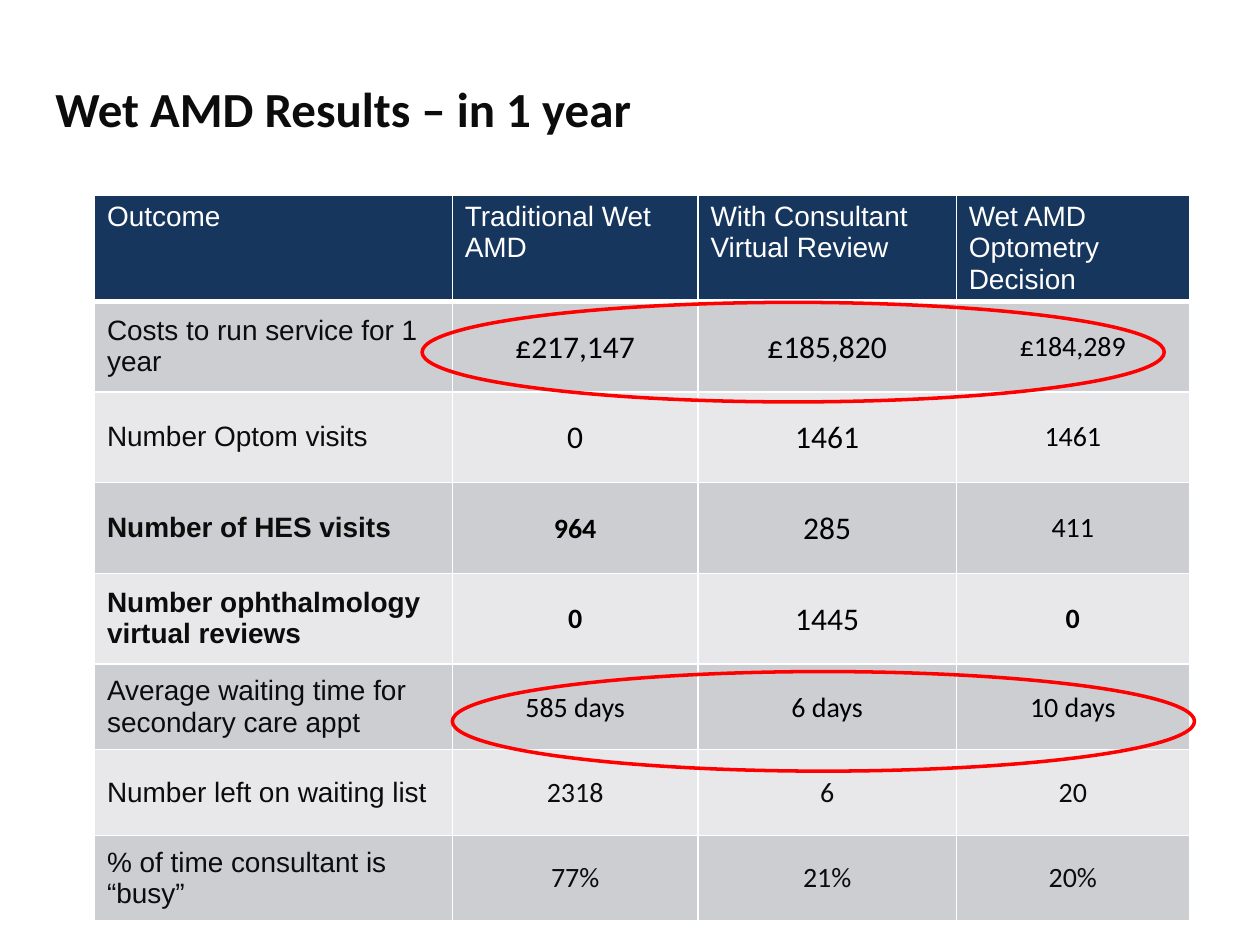
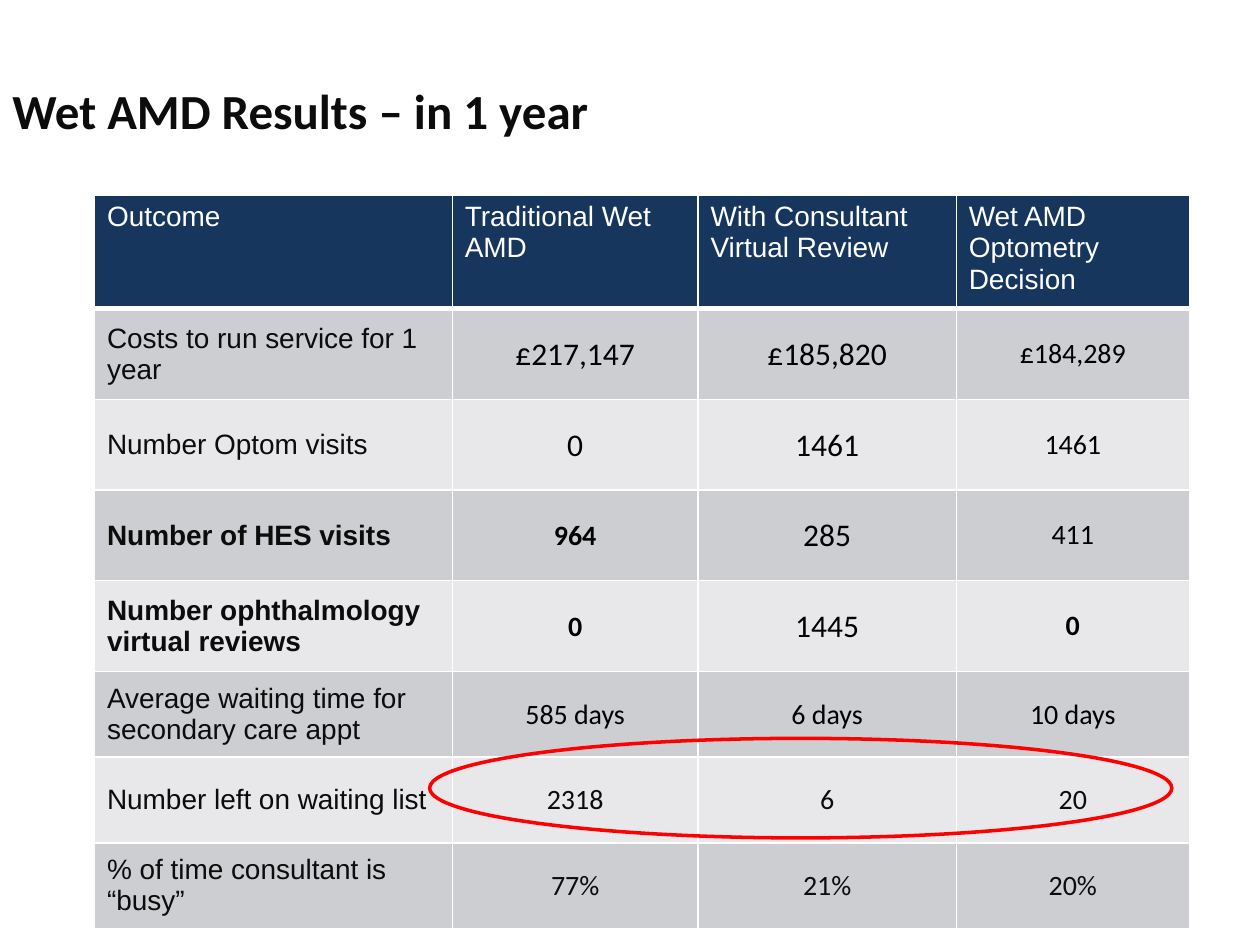
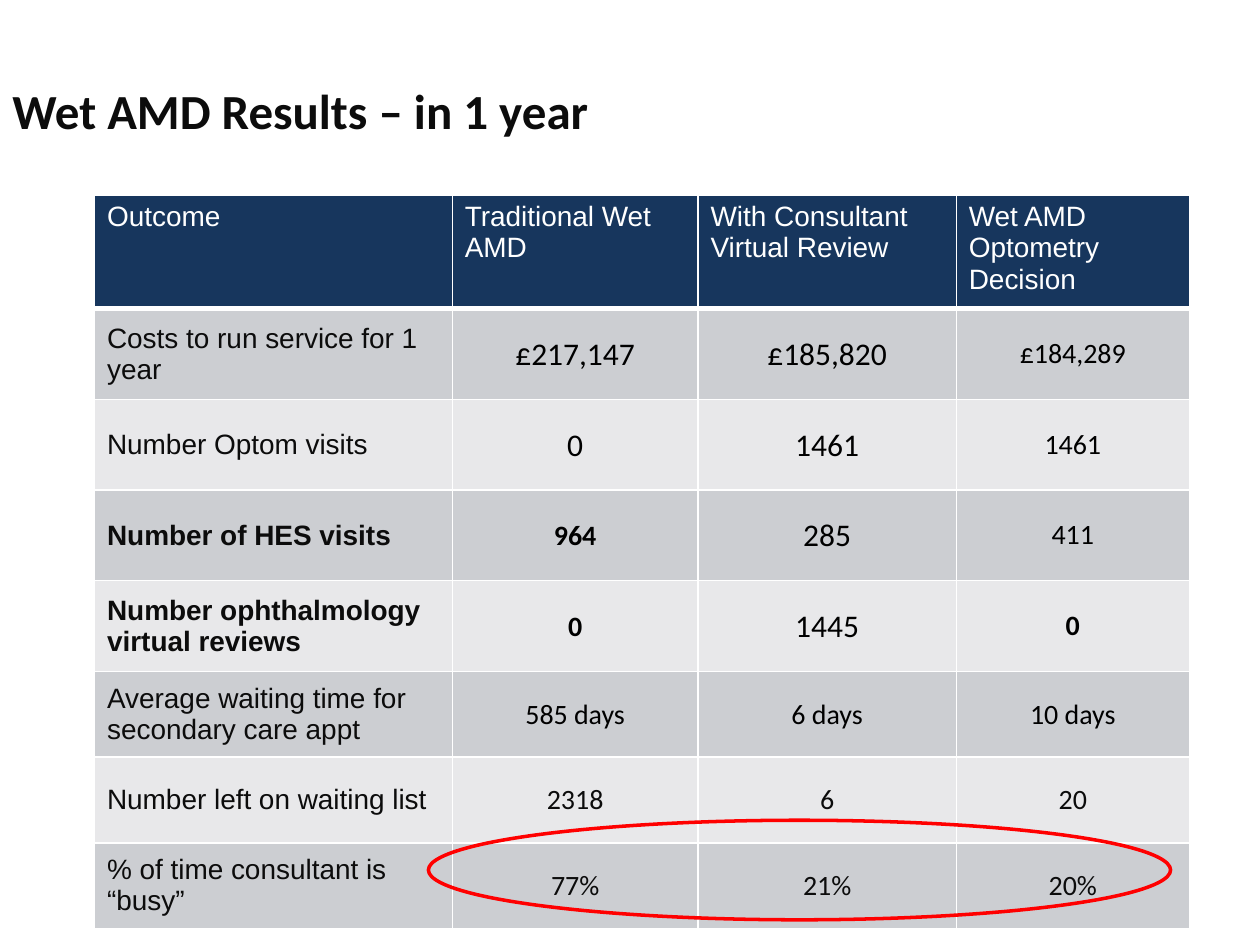
from lxml import etree
from pptx import Presentation
from pptx.dml.color import RGBColor
from pptx.enum import shapes, text
from pptx.oxml import ns
from pptx.util import Inches, Pt

NAVY = RGBColor(0x17, 0x36, 0x5D)
DARK_BAND = RGBColor(0xCC, 0xCE, 0xD2)
LIGHT_BAND = RGBColor(0xE8, 0xE8, 0xEA)
INK = RGBColor(0x0C, 0x0C, 0x0C)
BLACK = RGBColor(0, 0, 0)
WHITE = RGBColor(0xFF, 0xFF, 0xFF)
RED = RGBColor(0xFF, 0, 0)

TITLE = "Wet AMD Results – in 1 year"
RESULTS = [
    ["Outcome", "Traditional Wet AMD", "With Consultant Virtual Review", "Wet AMD Optometry Decision"],
    ["Costs to run service for 1 year", "£217,147", "£185,820", "£184,289"],
    ["Number Optom visits", "0", "1461", "1461"],
    ["Number of HES visits", "964", "285", "411"],
    ["Number ophthalmology virtual reviews", "0", "1445", "0"],
    ["Average waiting time for secondary care appt", "585 days", "6 days", "10 days"],
    ["Number left on waiting list", "2318", "6", "20"],
    ["% of time consultant is “busy”", "77%", "21%", "20%"],
]
COLUMN_WIDTHS = [2.84, 1.95, 2.05, 1.85]
ROW_HEIGHTS = [0.72] * 5 + [0.68] * 3
BOLD_CELLS = {(3, 0), (3, 1), (4, 0), (4, 1), (4, 3)}
LARGE_CELLS = {(1, 1), (1, 2), (2, 1), (2, 2), (3, 2), (4, 2)}
TIGHT_CELLS = {(row, column) for row in range(1, 6) for column in (1, 2)} | {(5, 3)}

TABLE_BOX = (0.75, 1.55, 8.7, 5.84)
RING_SIZE = (5.89, 0.79)
TITLE_SIZE = (9.31, 1.45)
PAGES = [
    ((0.34, 0.13), [(3.35, 2.4), (3.59, 5.33)]),
    ((0, 0.15), [(3.41, 5.86)]),
    ((0, 0.15), [(3.4, 6.51)]),
]


def inches(values):
    return [Inches(value) for value in values]


def style_paragraph(para, size, font_name, color, bold):
    para.font.size = Pt(size)
    para.font.name = font_name
    para.font.color.rgb = color
    para.font.bold = bold


def add_borders(cell, bottom_width):
    properties = cell._tc.get_or_add_tcPr()
    for side, width in (("L", 1), ("R", 1), ("T", 1), ("B", bottom_width)):
        line = etree.SubElement(properties, ns.qn(f"a:ln{side}"), w=str(Pt(width)))
        fill = etree.SubElement(line, ns.qn("a:solidFill"))
        etree.SubElement(fill, ns.qn("a:srgbClr"), val=str(WHITE))


def fill_cell(cell, row, column):
    header = row == 0
    add_borders(cell, 3 if header else 1)
    cell.fill.solid()
    cell.fill.fore_color.rgb = NAVY if header else DARK_BAND if row % 2 else LIGHT_BAND
    cell.text = RESULTS[row][column]
    para = cell.text_frame.paragraphs[0]
    is_value = not header and column > 0
    color = WHITE if header else BLACK if is_value and row < 6 else INK
    style_paragraph(para, 18 if (row, column) in LARGE_CELLS else 16,
                    "Calibri" if is_value else "Arial", color, (row, column) in BOLD_CELLS)
    if is_value:
        para.alignment = text.PP_ALIGN.CENTER
    if not header:
        cell.vertical_anchor = text.MSO_ANCHOR.MIDDLE
    if (row, column) in TIGHT_CELLS:
        cell.margin_left = cell.margin_right = cell.margin_top = Inches(0.01)
        cell.margin_bottom = 0


def add_results_table(page, box):
    table = page.shapes.add_table(len(ROW_HEIGHTS), len(COLUMN_WIDTHS), *inches(box)).table
    for column, width in zip(table.columns, COLUMN_WIDTHS):
        column.width = Inches(width)
    for row, height in zip(table.rows, ROW_HEIGHTS):
        row.height = Inches(height)
    for row in range(len(ROW_HEIGHTS)):
        for column in range(len(COLUMN_WIDTHS)):
            fill_cell(table.cell(row, column), row, column)


def add_ring(page, box):
    ring = page.shapes.add_shape(shapes.MSO_SHAPE.OVAL, *inches(box))
    ring.shadow.inherit = False
    ring.fill.background()
    ring.line.color.rgb = RED
    ring.line.width = Pt(2)


def add_title(page, box):
    frame = page.shapes.add_textbox(*inches(box)).text_frame
    frame.word_wrap = True
    frame.vertical_anchor = text.MSO_ANCHOR.MIDDLE
    frame.text = TITLE
    style_paragraph(frame.paragraphs[0], 28, "Calibri", INK, True)


def add_results_page(deck, title_corner, ring_corners):
    page = deck.slides.add_slide(deck.slide_layouts[6])
    add_results_table(page, TABLE_BOX)
    for corner in ring_corners:
        add_ring(page, corner + RING_SIZE)
    add_title(page, title_corner + TITLE_SIZE)


def main():
    deck = Presentation()
    deck.slide_width, deck.slide_height = inches((10, 7.5))
    for title_corner, ring_corners in PAGES:
        add_results_page(deck, title_corner, ring_corners)
    deck.save("out.pptx")


if __name__ == "__main__":
    main()
